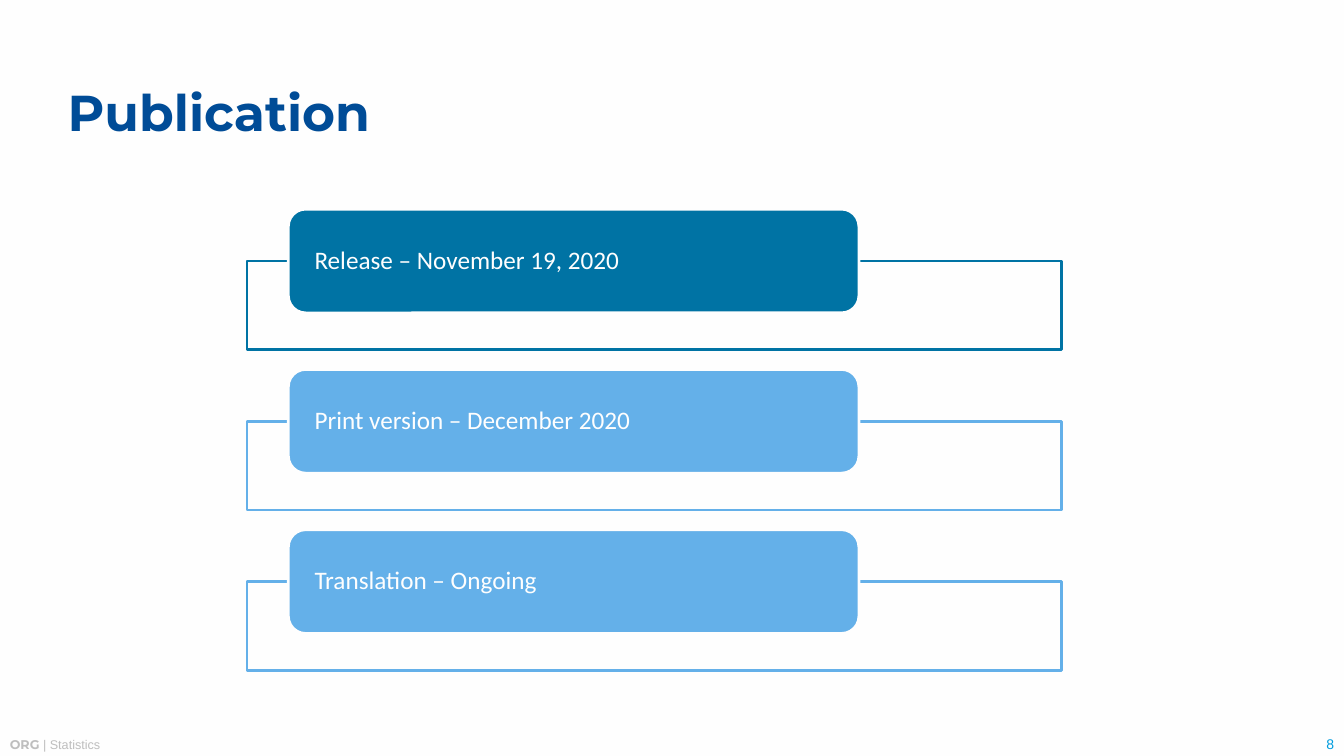
"""Build the publication schedule slide."""
from pptx import Presentation
from pptx import util as u
from pptx.dml.color import RGBColor
from pptx.enum import shapes, text

COLORS = {"paper": "FEFEFE", "title": "004C97", "dark": "0073A4",
          "light": "64B0E9", "footer": "BEBEBE", "number": "009CDE"}
TITLE = "Publication"
STAGES = [("Release – November 19, 2020", "dark"),
          ("Print version – December 2020", "light"),
          ("Translation – Ongoing", "light")]
FOOTER = [("ORG ", "Montserrat", True), ("| Statistics", "Arial", False)]
PAGE = "8"

FRAME_LEFT, FRAME_TOP, FRAME_W, FRAME_H = 2.45, 2.59, 8.08, 0.88
LABEL_LEFT, LABEL_W, LABEL_H = 2.86, 5.66, 1.03
PITCH = 1.59


def rgb(name):
    """Return a named colour."""
    return RGBColor.from_string(COLORS[name])


def add_run(p, words, size, font, color, bold=False):
    """Append one formatted run."""
    r = p.add_run()
    r.text = words
    r.font.size = u.Pt(size)
    r.font.name = font
    r.font.bold = bold
    r.font.color.rgb = rgb(color)


def add_box(s, kind, box, fill, line):
    """Add a filled and outlined shape."""
    sp = s.shapes.add_shape(kind, *map(u.Inches, box))
    sp.shadow.inherit = False
    sp.fill.solid()
    sp.fill.fore_color.rgb = rgb(fill)
    sp.line.color.rgb = rgb(line)
    sp.line.width = u.Pt(2)
    return sp


def add_stage(s, row, label, color):
    """Add a frame with its label centred on the top edge."""
    top = FRAME_TOP + row * PITCH
    add_box(s, shapes.MSO_SHAPE.RECTANGLE,
            (FRAME_LEFT, top, FRAME_W, FRAME_H), "paper", color)
    sp = add_box(s, shapes.MSO_SHAPE.ROUNDED_RECTANGLE,
                 (LABEL_LEFT, top - LABEL_H / 2, LABEL_W, LABEL_H), color, "paper")
    tf = sp.text_frame
    tf.word_wrap = True
    tf.margin_left = tf.margin_right = u.Inches(0.21)
    tf.margin_top = tf.margin_bottom = 0
    tf.vertical_anchor = text.MSO_ANCHOR.MIDDLE
    p = tf.paragraphs[0]
    p.alignment = text.PP_ALIGN.LEFT
    p.line_spacing = 0.9
    add_run(p, label, 18, "Calibri", "paper")


def add_text(s, box, anchor, align):
    """Add a wrapped text box and return its paragraph."""
    tf = s.shapes.add_textbox(*map(u.Inches, box)).text_frame
    tf.word_wrap = True
    tf.vertical_anchor = anchor
    p = tf.paragraphs[0]
    p.alignment = align
    return p


def main():
    """Assemble and save the slide."""
    prs = Presentation()
    prs.slide_width, prs.slide_height = u.Inches(13.33), u.Inches(7.5)
    s = prs.slides.add_slide(prs.slide_layouts[5])
    s.background.fill.solid()
    s.background.fill.fore_color.rgb = rgb("paper")

    p = add_text(s, (0, 7.26, 10, 0.25), text.MSO_ANCHOR.TOP, text.PP_ALIGN.LEFT)
    for words, font, bold in FOOTER:
        add_run(p, words, 9, font, "footer", bold)
    p = add_text(s, (12.01, 7.24, 1.32, 0.27), text.MSO_ANCHOR.BOTTOM, text.PP_ALIGN.RIGHT)
    add_run(p, PAGE, 10, "Arial", "number")

    title = s.shapes.title
    title.left, title.top, title.width, title.height = map(u.Inches, (0.67, 0.53, 12, 1.22))
    tf = title.text_frame
    tf.margin_left = tf.margin_right = tf.margin_top = tf.margin_bottom = 0
    tf.vertical_anchor = text.MSO_ANCHOR.MIDDLE
    p = tf.paragraphs[0]
    p.alignment = text.PP_ALIGN.LEFT
    p.line_spacing = 0.9
    add_run(p, TITLE, 36, "Montserrat", "title", True)

    for row, (label, color) in enumerate(STAGES):
        add_stage(s, row, label, color)
    prs.save("out.pptx")


if __name__ == "__main__":
    main()
